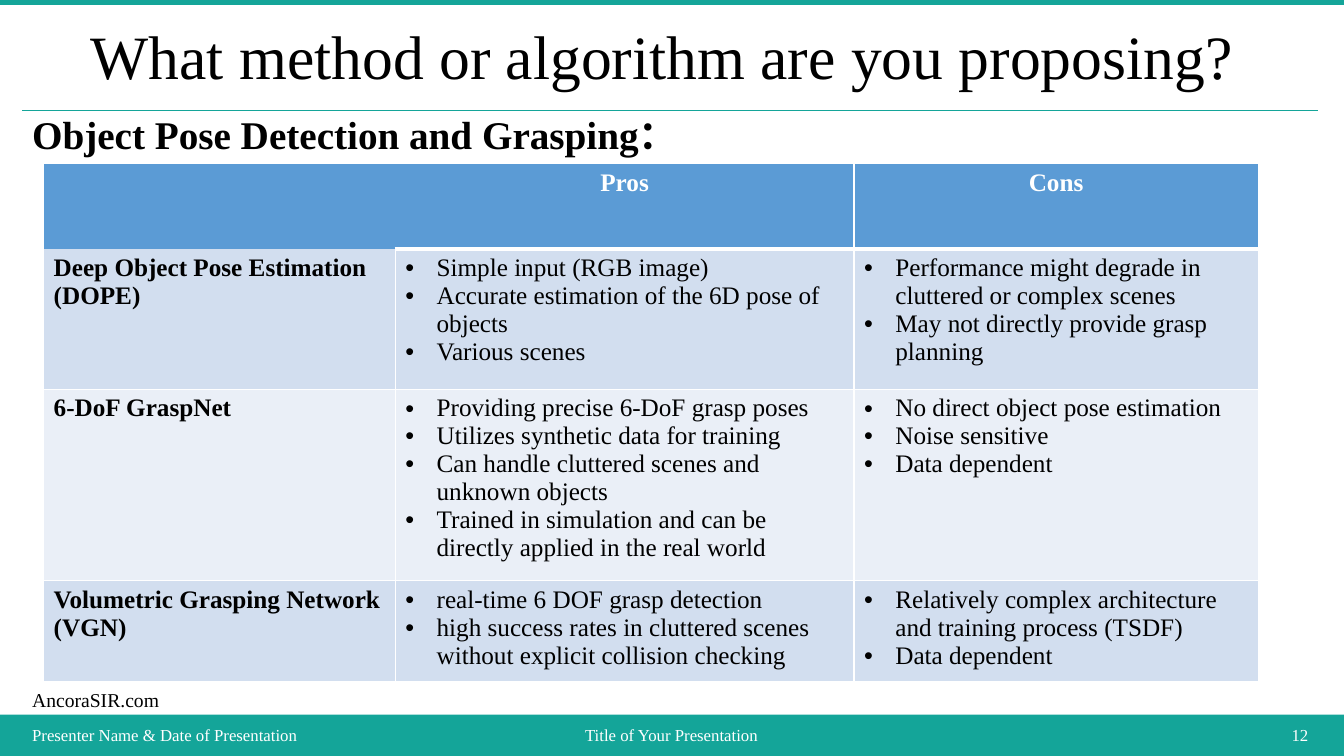
from lxml.etree import SubElement
from pptx import Presentation
from pptx.dml.color import RGBColor
from pptx.enum.shapes import MSO_CONNECTOR, MSO_SHAPE
from pptx.enum.text import MSO_ANCHOR, PP_ALIGN
from pptx.oxml import parse_xml
from pptx.oxml.ns import nsdecls, qn
from pptx.util import Cm, Pt

FONT = "Times New Roman"
TEAL = RGBColor(0x14, 0xA5, 0x99)
WHITE = RGBColor(0xFF, 0xFF, 0xFF)
BLACK = RGBColor(0x00, 0x00, 0x00)
HEADER_BLUE = RGBColor(0x5B, 0x9B, 0xD5)
BAND_DARK = RGBColor(0xD2, 0xDE, 0xEF)
BAND_LIGHT = RGBColor(0xEA, 0xEF, 0xF7)

MARGIN = 0.56
CONTENT_WIDTH = 32.66
COLUMN_WIDTHS = [8.86, 11.56, 10.19]
ROW_HEIGHTS = [2.16, 3.53, 4.48, 2.49]
HEADINGS = ["Pros", "Cons"]
METHODS = [
    (["Deep Object Pose Estimation", "(DOPE)"],
     ["Simple input (RGB image)",
      "Accurate estimation of the 6D pose of objects",
      "Various scenes"],
     ["Performance might degrade in cluttered or complex scenes",
      "May not directly provide grasp planning"]),
    (["6-DoF GraspNet"],
     ["Providing precise 6-DoF grasp poses",
      "Utilizes synthetic data for training",
      "Can handle cluttered scenes and unknown objects",
      "Trained in simulation and can be directly applied in the real world"],
     ["No direct object pose estimation", "Noise sensitive", "Data dependent"]),
    (["Volumetric Grasping Network (VGN)"],
     ["real-time 6 DOF grasp detection",
      "high success rates in cluttered scenes without explicit collision checking"],
     ["Relatively complex architecture and training process (TSDF)",
      "Data dependent"]),
]


def add_span(para, text, size, color=BLACK, bold=False):
    span = para.add_run()
    span.text = text
    font = span.font
    font.name, font.size, font.bold = FONT, Pt(size), bold
    font.color.rgb = color


def add_text(page, left, top, width, height, text, size, color=BLACK, bold=False,
             align=PP_ALIGN.LEFT, anchor=MSO_ANCHOR.MIDDLE, line_spacing=1.0):
    box = page.shapes.add_textbox(Cm(left), Cm(top), Cm(width), Cm(height))
    frame = box.text_frame
    frame.word_wrap = True
    frame.vertical_anchor = anchor
    para = frame.paragraphs[0]
    para.alignment = align
    para.line_spacing = line_spacing
    add_span(para, text, size, color, bold)


def add_backdrop(page, width, top, height):
    """Teal page with a white panel, which leaves a strip above and a footer band."""
    fill = page.background.fill
    fill.solid()
    fill.fore_color.rgb = TEAL
    panel = page.shapes.add_shape(MSO_SHAPE.RECTANGLE, 0, Cm(top), width, Cm(height))
    panel.shadow.inherit = False
    panel.fill.solid()
    panel.fill.fore_color.rgb = WHITE
    panel.line.fill.background()


def add_heading(page, left, top, width, height):
    """Title, the rule under it and the subtitle below the rule."""
    bottom = top + height
    rule = page.shapes.add_connector(MSO_CONNECTOR.STRAIGHT, Cm(left), Cm(bottom),
                                     Cm(left + width), Cm(bottom))
    rule.line.color.rgb = TEAL
    rule.line.width = Pt(1)
    SubElement(rule.element.spPr, qn("a:effectLst"))
    add_text(page, left, top, width, height,
             "What method or algorithm are you proposing? ", 44,
             align=PP_ALIGN.CENTER, line_spacing=0.9)
    add_text(page, left, bottom, width, 1.3, "Object Pose Detection and Grasping：", 28,
             bold=True, anchor=MSO_ANCHOR.TOP, line_spacing=0.9)


def add_footer(page, left, top, height):
    add_text(page, left, top - 0.8, 4, 0.86, "AncoraSIR.com", 14)
    parts = [("Presenter Name & Date of Presentation", 12.34, PP_ALIGN.LEFT),
             ("Title of Your Presentation", 8.05, PP_ALIGN.CENTER),
             ("12", 12.27, PP_ALIGN.RIGHT)]
    for text, width, align in parts:
        add_text(page, left, top, width, height, text, 12, WHITE, align=align)
        left += width


def border_widths(row, column):
    """Points for the left, right, top and bottom edge; the corner cell has none."""
    if row == 0:
        return (0, 0, 0, 0) if column == 0 else (column - 1, 1, 1, 3)
    top = 1 if row > 1 else 3 if column else 0
    return 1, 1, top, 1


def style_cell(cell, row, column):
    cell.fill.solid()
    cell.fill.fore_color.rgb = (HEADER_BLUE if row == 0
                                else BAND_DARK if row % 2 else BAND_LIGHT)
    properties = cell._tc.get_or_add_tcPr()
    for index, (side, points) in enumerate(zip("LRTB", border_widths(row, column))):
        paint = (f'<a:solidFill><a:srgbClr val="{WHITE}"/></a:solidFill>'
                 if points else "<a:noFill/>")
        properties.insert(index, parse_xml(
            f'<a:ln{side} {nsdecls("a")} w="{Pt(points)}">{paint}</a:ln{side}>'))


def add_bullet(para):
    properties = para._p.get_or_add_pPr()
    properties.set("marL", str(Cm(0.79)))
    properties.set("indent", str(Cm(-0.79)))
    SubElement(properties, qn("a:buFont"), typeface="Arial")
    SubElement(properties, qn("a:buChar"), char="•")


def fill_cell(cell, lines, color, bold, bulleted=False, align=PP_ALIGN.LEFT):
    frame = cell.text_frame
    for index, line in enumerate(lines):
        para = frame.add_paragraph() if index else frame.paragraphs[0]
        para.alignment = align
        if bulleted:
            add_bullet(para)
        add_span(para, line, 18, color, bold)


def add_comparison(page, left, top):
    table = page.shapes.add_table(
        len(ROW_HEIGHTS), len(COLUMN_WIDTHS), Cm(left), Cm(top),
        Cm(sum(COLUMN_WIDTHS)), Cm(sum(ROW_HEIGHTS))).table
    for column, width in zip(table.columns, COLUMN_WIDTHS):
        column.width = Cm(width)
    for row, height in enumerate(ROW_HEIGHTS):
        table.rows[row].height = Cm(height)
        for column in range(len(COLUMN_WIDTHS)):
            style_cell(table.cell(row, column), row, column)
    for column, heading in enumerate(HEADINGS, 1):
        fill_cell(table.cell(0, column), [heading], WHITE, True, align=PP_ALIGN.CENTER)
    for row, method in enumerate(METHODS, 1):
        for column, lines in enumerate(method):
            fill_cell(table.cell(row, column), lines, BLACK, column == 0, column > 0)


def main():
    deck = Presentation()
    deck.slide_width, deck.slide_height = Cm(33.87), Cm(19.05)
    page = deck.slides.add_slide(deck.slide_layouts[6])
    add_backdrop(page, deck.slide_width, 0.13, 17.88)
    add_heading(page, MARGIN, 0.22, CONTENT_WIDTH, 2.57)
    add_comparison(page, 1.1, 4.12)
    add_footer(page, MARGIN, 18.01, 1.02)
    deck.save("out.pptx")


if __name__ == "__main__":
    main()
